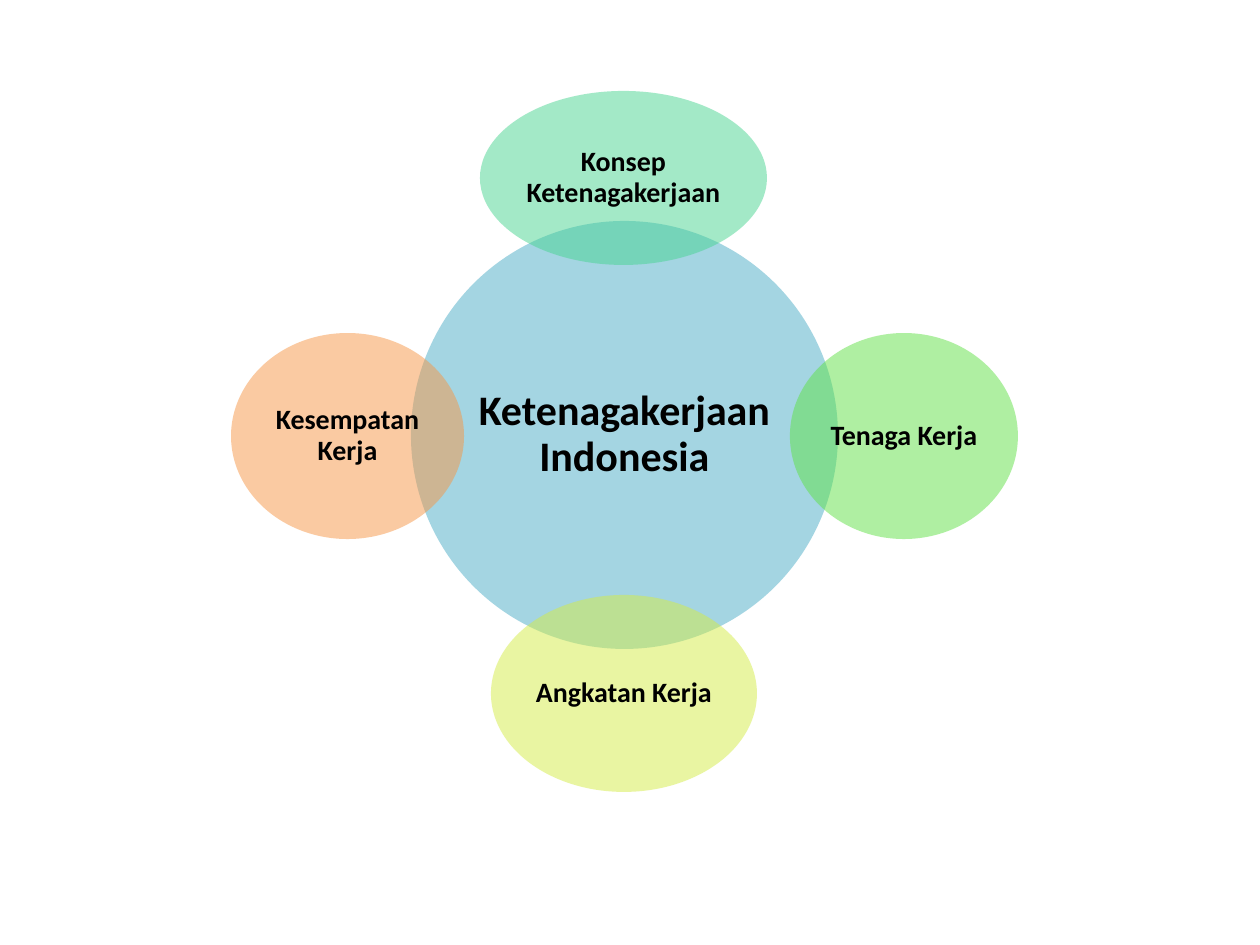
from dataclasses import dataclass

from lxml.etree import SubElement
from pptx import Presentation
from pptx.dml.color import RGBColor
from pptx.enum.shapes import MSO_SHAPE as Shape
from pptx.enum.text import MSO_ANCHOR as Anchor, PP_ALIGN as Align
from pptx.oxml.ns import qn
from pptx.util import Emu, Pt


@dataclass(frozen=True)
class Theme:
    """Colours, font and type sizes of the slide."""
    font: str = "Calibri"
    text: str = "000000"
    hub: str = "4BACC6"
    concept: str = "48D491"
    worker: str = "60E146"
    workforce: str = "D5EC46"
    opportunity: str = "F79646"
    opacity: int = 50
    hub_size: int = 24
    label_size: int = 16


class Diagram:
    """Draws styled elements on the current slide."""

    SCALE = 914400 / 126

    def __init__(self, slide, theme):
        """Keep the slide and its theme."""
        self.slide = slide
        self.theme = theme

    @classmethod
    def px(cls, length):
        """Turn px into EMU."""
        return Emu(round(length * cls.SCALE))

    def ellipse(self, box, color, text, size, inset):
        """Add a translucent ellipse with a centred bold label."""
        sp = self.slide.shapes.add_shape(Shape.OVAL, *map(self.px, box))
        sp.shadow.inherit = False
        sp.line.fill.background()
        sp.fill.solid()
        sp.fill.fore_color.rgb = RGBColor.from_string(color)
        clr = sp.fill._xPr.find(qn("a:solidFill"))[0]
        SubElement(clr, qn("a:alpha"), val=str(self.theme.opacity * 1000))
        tf = sp.text_frame
        tf.word_wrap = True
        tf.vertical_anchor = Anchor.MIDDLE
        tf.margin_left = tf.margin_right = self.px(inset)
        tf.margin_top = tf.margin_bottom = self.px(inset)
        p = tf.paragraphs[0]
        p.alignment = Align.CENTER
        p.line_spacing = 0.9
        r = p.add_run()
        r.text = text
        r.font.name = self.theme.font
        r.font.size = Pt(size)
        r.font.bold = True
        r.font.color.rgb = RGBColor.from_string(self.theme.text)


def main():
    """Build the employment diagram."""
    prs = Presentation()
    prs.slide_width, prs.slide_height = Diagram.px(1260), Diagram.px(945)
    theme = Theme()
    diagram = Diagram(prs.slides.add_slide(prs.slide_layouts[6]), theme)
    diagram.ellipse((411, 221, 427, 428), theme.hub,
                    "Ketenagakerjaan Indonesia", theme.hub_size, 3)
    satellites = [
        ((480, 91, 287, 174), theme.concept, "Konsep Ketenagakerjaan"),
        ((790, 333, 228, 206), theme.worker, "Tenaga Kerja"),
        ((491, 595, 266, 197), theme.workforce, "Angkatan Kerja"),
        ((231, 333, 233, 206), theme.opportunity, "Kesempatan Kerja"),
    ]
    for box, color, text in satellites:
        diagram.ellipse(box, color, text, theme.label_size, 2)
    prs.save("out.pptx")


if __name__ == "__main__":
    main()
